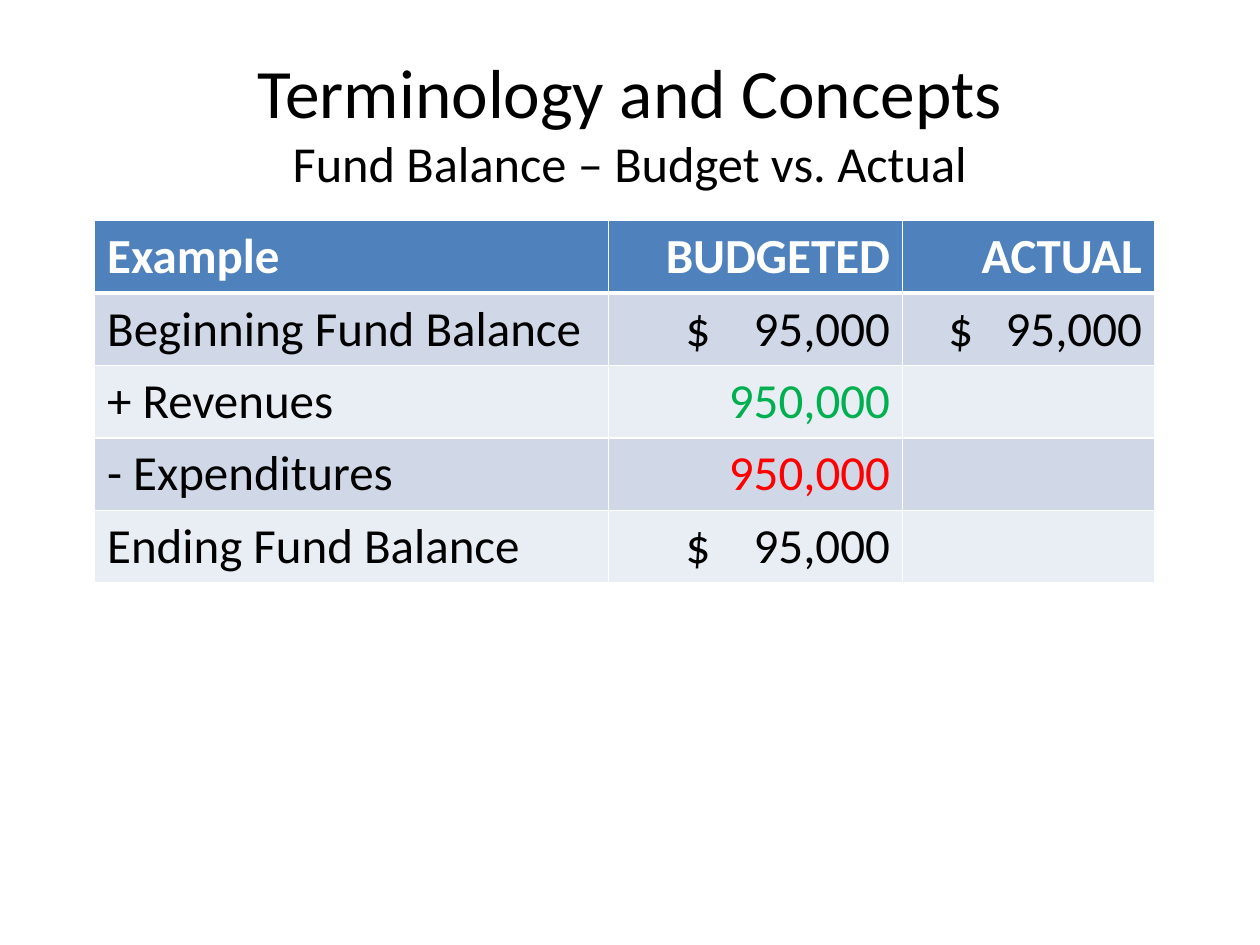
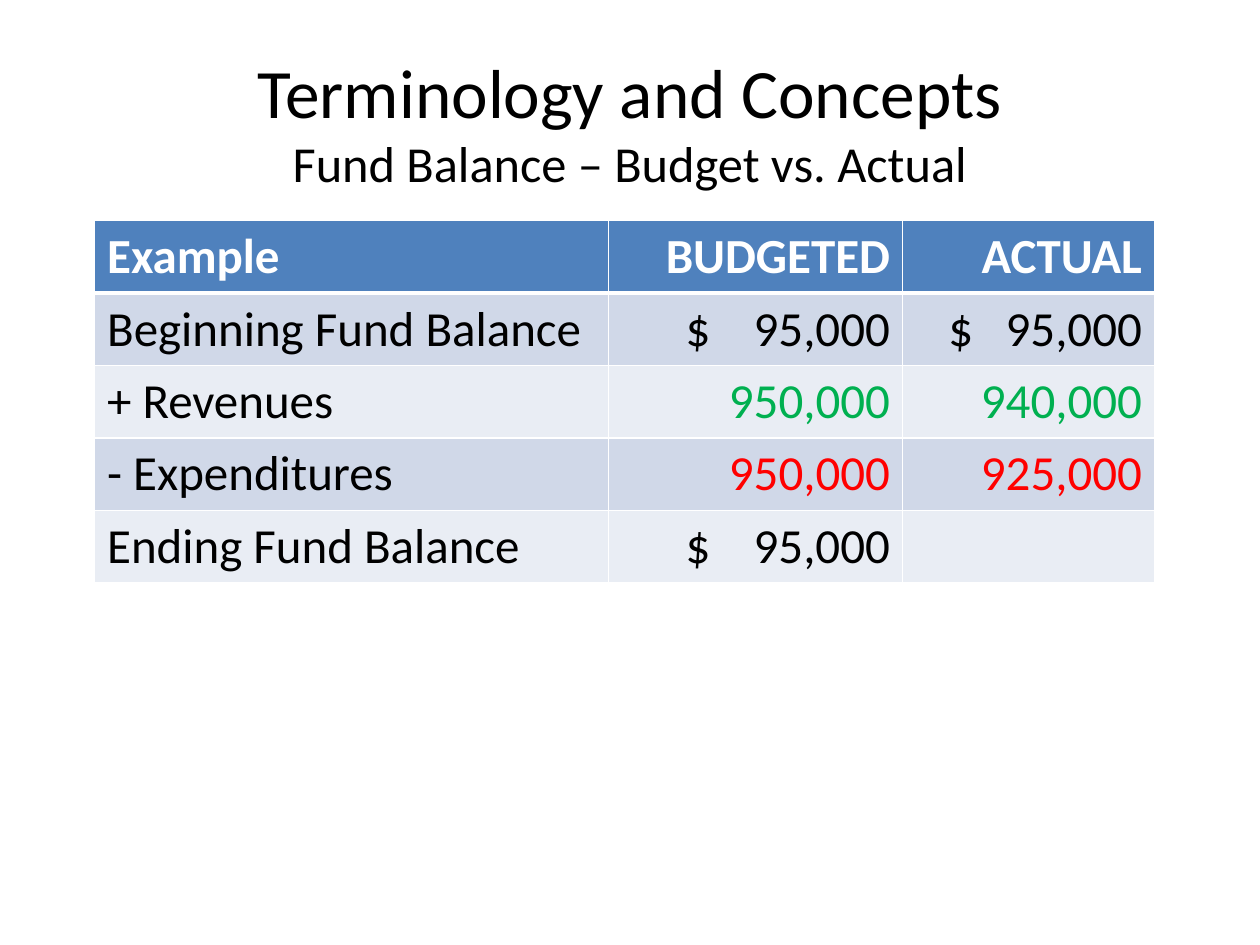
"""Build two slides that compare a budgeted and an actual fund balance."""
import pptx
import pptx.dml.color
import pptx.enum.text
import pptx.oxml
import pptx.oxml.ns
import pptx.util
from pptx.util import Cm

HUES = {
    "white": "FFFFFF", "black": "000000", "head": "4F81BD",
    "dark": "D0D8E8", "light": "E9EDF4", "green": "00B050", "red": "FF0000",
}
ALIGN = pptx.enum.text.PP_ALIGN
COLS = (Cm(10.36), Cm(5.92), Cm(5.08))
DOLLAR = (None, Cm(1.3), Cm(0.68))
PAD = Cm(0.25)
ROW = Cm(1.46)
SUM = "\t$\t95,000"


def write(para, text, size=28, hue="black", bold=False, align=ALIGN.LEFT):
    run = para.add_run()
    run.text = text
    para.alignment = align
    font = run.font
    font.name = "Calibri"
    font.size = pptx.util.Pt(size)
    font.bold = bold
    font.color.rgb = pptx.dml.color.RGBColor.from_string(HUES[hue])


def element(tag, **attrs):
    item = pptx.oxml.parse_xml(f"<{tag} {pptx.oxml.ns.nsdecls('a')}/>")
    for name, value in attrs.items():
        item.set(name, str(value))
    return item


class Deck:
    def __init__(self):
        self.prs = pptx.Presentation()
        self.prs.slide_width = Cm(25.4)
        self.prs.slide_height = Cm(19.05)
        self.slide = None

    def page(self):
        self.slide = self.prs.slides.add_slide(self.prs.slide_layouts[6])

    def title(self, main, sub):
        box = self.slide.shapes.add_textbox(Cm(1.27), Cm(0.84), Cm(22.86), Cm(3.18))
        frame = box.text_frame
        frame.word_wrap = True
        frame.vertical_anchor = pptx.enum.text.MSO_ANCHOR.MIDDLE
        para = frame.paragraphs[0]
        write(para, main, size=39.6, align=ALIGN.CENTER)
        para.add_line_break()
        write(para, sub, size=28.8, align=ALIGN.CENTER)

    def border(self, cell, head):
        props = cell._tc.get_or_add_tcPr()
        for at, side in enumerate(("lnL", "lnR", "lnT", "lnB")):
            width = pptx.util.Pt(3 if head and side == "lnB" else 1)
            line = element(f"a:{side}", w=width)
            fill = element("a:solidFill")
            fill.append(element("a:srgbClr", val=HUES["white"]))
            line.append(fill)
            props.insert(at, line)

    def tabs(self, para, start, end):
        stops = element("a:tabLst")
        stops.append(element("a:tab", pos=start, algn="l"))
        stops.append(element("a:tab", pos=end, algn="r"))
        para._p.get_or_add_pPr().append(stops)

    def cell(self, cell, text, row, col):
        head = row == 0
        band = "head" if head else "dark" if row % 2 else "light"
        cell.fill.solid()
        cell.fill.fore_color.rgb = pptx.dml.color.RGBColor.from_string(HUES[band])
        cell.margin_left = cell.margin_right = PAD
        self.border(cell, head)
        para = cell.text_frame.paragraphs[0]
        if not text:
            para.font.size = pptx.util.Pt(28)
            return
        hue = "white" if head else {2: "green", 3: "red"}.get(row, "black") if col else "black"
        tabbed = "\t" in text
        align = ALIGN.RIGHT if col and not tabbed else ALIGN.LEFT
        write(para, text, hue=hue, bold=head, align=align)
        if tabbed:
            self.tabs(para, DOLLAR[col], COLS[col] - 2 * PAD)

    def table(self, rows):
        frame = self.slide.shapes.add_table(
            len(rows), len(COLS), Cm(1.91), Cm(4.45), sum(COLS), ROW * len(rows))
        grid = frame.table
        for col, width in zip(grid.columns, COLS):
            col.width = width
        for r, texts in enumerate(rows):
            grid.rows[r].height = ROW
            for c, text in enumerate(texts):
                self.cell(grid.cell(r, c), text, r, c)


def main():
    deck = Deck()
    for gain, cost in (("", ""), ("940,000", "925,000")):
        deck.page()
        deck.title("Terminology and Concepts", "Fund Balance – Budget vs. Actual")
        deck.table((
            ("Example", "BUDGETED", "ACTUAL"),
            ("Beginning Fund Balance", SUM, SUM),
            ("+ Revenues", "950,000", gain),
            ("- Expenditures", "950,000", cost),
            ("Ending Fund Balance", SUM, ""),
        ))
    deck.prs.save("out.pptx")


if __name__ == "__main__":
    main()
